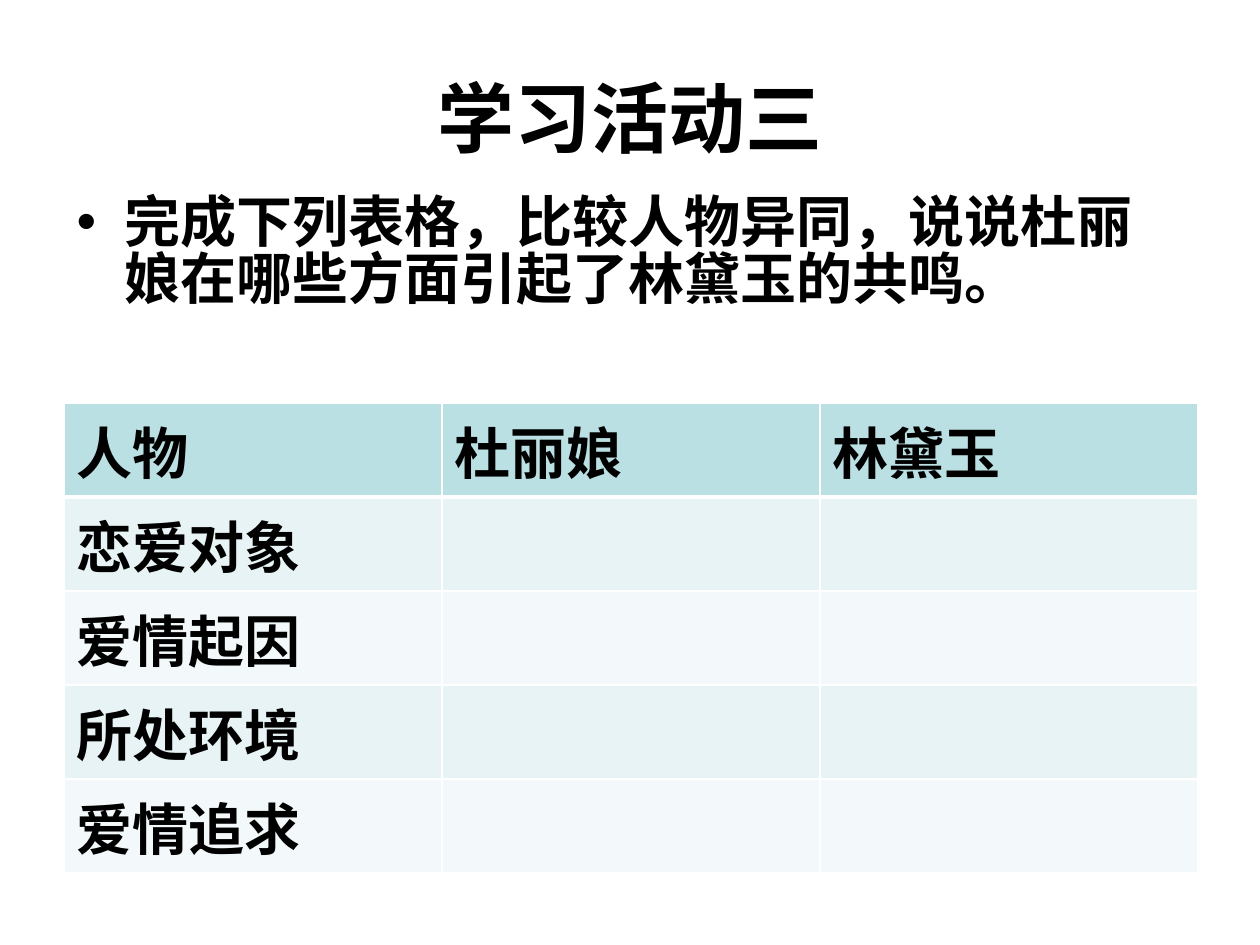
from pptx import Presentation
from pptx.dml.color import RGBColor
from pptx.enum.text import MSO_ANCHOR, PP_ALIGN
from pptx.oxml.ns import qn
from pptx.util import Inches, Pt
from lxml.etree import SubElement

TITLE = "学习活动三"
TASK = "完成下列表格，比较人物异同，说说杜丽娘在哪些方面引起了林黛玉的共鸣。"
HEADS = ["人物", "杜丽娘", "林黛玉"]
TOPICS = ["恋爱对象", "爱情起因", "所处环境", "爱情追求"]
ROWS = [HEADS] + [[topic, "", ""] for topic in TOPICS]

THEME = {
    "ink": "000000", "rule": "FFFFFF", "head": "BBE0E3",
    "bands": ["E7F3F4", "F3F9FA"],
    "title": 44, "body": 32, "font": "Arial",
}
LEFT, WIDTH = 0.51, 9
ROW, LAST = 0.42, 0.63


def style(para, size):
    looks = {"name": THEME["font"], "size": Pt(size), "bold": True}
    for run in para.runs:
        for key, value in looks.items():
            setattr(run.font, key, value)
        run.font.color.rgb = RGBColor.from_string(THEME["ink"])


def place(shape, *box):
    for key, value in zip(("left", "top", "width", "height"), box):
        setattr(shape, key, Inches(value))


def border(cell, head):
    props = cell._tc.get_or_add_tcPr()
    for side in "LRTB":
        width = 3 if head and side == "B" else 1
        line = SubElement(props, qn(f"a:ln{side}"), w=str(Pt(width)))
        fill = SubElement(line, qn("a:solidFill"))
        SubElement(fill, qn("a:srgbClr"), val=THEME["rule"])


def add_title(slide):
    title = slide.shapes.title
    place(title, 0.5, 0.3, 9, 1.25)
    frame = title.text_frame
    frame.text = TITLE
    frame.vertical_anchor = MSO_ANCHOR.MIDDLE
    para = frame.paragraphs[0]
    para.alignment = PP_ALIGN.CENTER
    style(para, THEME["title"])


def add_grid(slide):
    height = ROW * (len(ROWS) - 1) + LAST
    grid = slide.shapes.add_table(
        len(ROWS), len(HEADS), Inches(LEFT), Inches(3.2),
        Inches(WIDTH), Inches(height)).table
    for col in grid.columns:
        col.width = Inches(WIDTH / len(HEADS))
    for r, words in enumerate(ROWS):
        grid.rows[r].height = Inches(LAST if r == len(ROWS) - 1 else ROW)
        shade = THEME["bands"][(r - 1) % 2] if r else THEME["head"]
        for c, word in enumerate(words):
            cell = grid.cell(r, c)
            border(cell, r == 0)
            cell.fill.solid()
            cell.fill.fore_color.rgb = RGBColor.from_string(shade)
            if word:
                cell.text = word
                style(cell.text_frame.paragraphs[0], THEME["body"])


def add_task(slide):
    box = slide.shapes.add_textbox(0, 0, 0, 0)
    place(box, LEFT, 1.52, WIDTH, 4.95)
    frame = box.text_frame
    frame.word_wrap = True
    frame.text = TASK
    para = frame.paragraphs[0]
    para.line_spacing = 0.84
    para.space_before = Pt(THEME["body"] * 0.2)
    style(para, THEME["body"])
    props = para._p.get_or_add_pPr()
    indent = Inches(0.38)
    props.set("marL", str(indent))
    props.set("indent", str(-indent))
    SubElement(props, qn("a:buFont"), typeface=THEME["font"])
    SubElement(props, qn("a:buChar"), char="•")


def main():
    deck = Presentation()
    deck.slide_width, deck.slide_height = Inches(10), Inches(7.5)
    slide = deck.slides.add_slide(deck.slide_layouts[5])
    add_title(slide)
    add_grid(slide)
    add_task(slide)
    deck.save("out.pptx")


if __name__ == "__main__":
    main()
